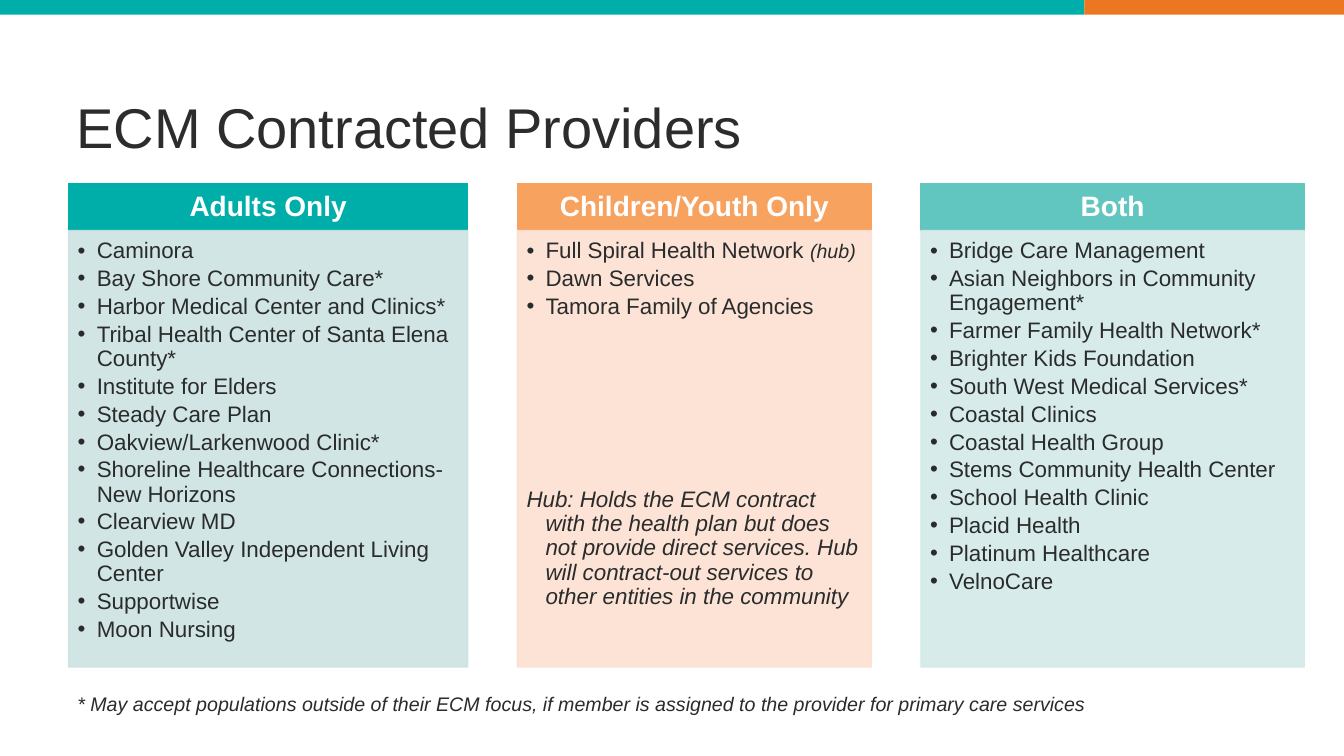
from lxml import etree
from pptx import Presentation
from pptx import util as u
from pptx.dml.color import RGBColor
from pptx.enum import shapes, text
from pptx.oxml import ns

# Content
TITLE = "ECM Contracted Providers"
FOOTNOTE = ("* May accept populations outside of their ECM focus, if member is "
            "assigned to the provider for primary care services")
HUB_TAG = "(hub)"
HUB_NOTE = ("Hub: Holds the ECM contract with the health plan but does not provide "
            "direct services. Hub will contract-out services to other entities in "
            "the community")
GROUPS = [
    dict(heading="Adults Only", width=10.06, dark="00AEA9", light="CCE3E2", note="",
         providers=["Caminora", "Bay Shore Community Care*",
                    "Harbor Medical Center and Clinics*",
                    "Tribal Health Center of Santa Elena County*",
                    "Institute for Elders", "Steady Care Plan",
                    "Oakview/Larkenwood Clinic*",
                    "Shoreline Healthcare Connections-New Horizons",
                    "Clearview MD", "Golden Valley Independent Living Center",
                    "Supportwise", "Moon Nursing"]),
    dict(heading="Children/Youth Only", width=8.92, dark="F8A260", light="FCE0D2",
         note=HUB_NOTE,
         providers=["Full Spiral Health Network " + HUB_TAG, "Dawn Services",
                    "Tamora Family of Agencies"]),
    dict(heading="Both", width=9.66, dark="62C6C0", light="D3EAE8", note="",
         providers=["Bridge Care Management",
                    "Asian Neighbors in Community Engagement*",
                    "Farmer Family Health Network*", "Brighter Kids Foundation",
                    "South West Medical Services*", "Coastal Clinics",
                    "Coastal Health Group", "Stems Community Health Center",
                    "School Health Clinic", "Placid Health",
                    "Platinum Healthcare", "VelnoCare"]),
]

# Layout in centimetres
SLIDE_W, SLIDE_H = 33.87, 19.05
BAND_SPLIT, BAND_H = 27.33, 0.37
LEFT, TOP, GAP = 1.73, 4.62, 1.25
HEADING_H, LIST_H = 1.19, 11.0
INDENT = 0.48
INK = "2A2C2C"


def color(target, hex_code, alpha=None):
    target.rgb = RGBColor.from_string(hex_code)
    if alpha:
        for srgb in target._xFill.iter(ns.qn("a:srgbClr")):
            etree.SubElement(srgb, ns.qn("a:alpha")).set("val", str(alpha * 1000))


def style(run, size, hex_code=INK, bold=False, italic=False):
    run.font.name = "Arial"
    run.font.size = u.Pt(size)
    run.font.bold, run.font.italic = bold, italic
    color(run.font.color, hex_code)


def set_insets(frame, left, top, right, bottom):
    frame.word_wrap = True
    frame.margin_left, frame.margin_top = u.Cm(left), u.Cm(top)
    frame.margin_right, frame.margin_bottom = u.Cm(right), u.Cm(bottom)


def add_block(slide, x, y, w, h, hex_code, alpha=None, outlined=True):
    block = slide.shapes.add_shape(shapes.MSO_SHAPE.RECTANGLE,
                                   u.Cm(x), u.Cm(y), u.Cm(w), u.Cm(h))
    block.shadow.inherit = False
    block.fill.solid()
    fills = [block.fill]
    if outlined:
        block.line.width = u.Pt(1)
        block.line.fill.solid()
        fills.append(block.line.fill)
    else:
        block.line.fill.background()
    for fill in fills:
        color(fill.fore_color, hex_code)
        if alpha:
            srgb = fill.fore_color._xFill if hasattr(fill.fore_color, "_xFill") else None
    if alpha:
        for srgb in block._element.spPr.iter(ns.qn("a:srgbClr")):
            etree.SubElement(srgb, ns.qn("a:alpha")).set("val", str(alpha * 1000))
    return block


def add_label(slide, x, y, w, h, words, size, hex_code=INK, italic=False):
    label = slide.shapes.add_textbox(u.Cm(x), u.Cm(y), u.Cm(w), u.Cm(h))
    label.text_frame.word_wrap = True
    label.text_frame.text = words
    style(label.text_frame.paragraphs[0].runs[0], size, hex_code, italic=italic)
    return label


def format_item(paragraph, bullet):
    paragraph.alignment = text.PP_ALIGN.LEFT
    paragraph.line_spacing = 0.9
    paragraph.space_after = u.Pt(2.6)
    props = paragraph._p.get_or_add_pPr()
    props.set("marL", str(u.Cm(INDENT)))
    props.set("indent", str(-u.Cm(INDENT)))
    if bullet:
        etree.SubElement(props, ns.qn("a:buFont")).set("typeface", "Arial")
        etree.SubElement(props, ns.qn("a:buChar")).set("char", "•")


def add_group(slide, x, group):
    # Heading bar
    heading = add_block(slide, x, TOP, group["width"], HEADING_H, group["dark"])
    frame = heading.text_frame
    set_insets(frame, 0.41, 0.23, 0.41, 0.23)
    frame.vertical_anchor = text.MSO_ANCHOR.MIDDLE
    frame.text = group["heading"]
    frame.paragraphs[0].alignment = text.PP_ALIGN.CENTER
    frame.paragraphs[0].line_spacing = 0.9
    style(frame.paragraphs[0].runs[0], 20, "FFFFFF", bold=True)

    # Provider list
    panel = add_block(slide, x, TOP + HEADING_H, group["width"], LIST_H,
                      group["light"], alpha=90)
    frame = panel.text_frame
    set_insets(frame, 0.23, 0.23, 0.3, 0.36)
    frame.vertical_anchor = text.MSO_ANCHOR.TOP
    for i, provider in enumerate(group["providers"]):
        item = frame.add_paragraph() if i else frame.paragraphs[0]
        item.text = provider.removesuffix(HUB_TAG)
        format_item(item, bullet=True)
        style(item.runs[0], 16)
        if provider.endswith(HUB_TAG):
            tag = item.add_run()
            tag.text = HUB_TAG
            style(tag, 14, italic=True)

    # Explanation under the list
    if group["note"]:
        note = frame.add_paragraph()
        note.text = group["note"]
        format_item(note, bullet=False)
        note.space_before = u.Pt(118)
        style(note.runs[0], 16, italic=True)


def main():
    deck = Presentation()
    deck.slide_width, deck.slide_height = u.Cm(SLIDE_W), u.Cm(SLIDE_H)
    slide = deck.slides.add_slide(deck.slide_layouts[6])

    # Top band
    add_block(slide, 0, 0, BAND_SPLIT, BAND_H, "00AEA9", outlined=False)
    add_block(slide, BAND_SPLIT, 0, SLIDE_W - BAND_SPLIT, BAND_H, "ED7623",
              outlined=False)

    # Title and footnote
    title = add_label(slide, 1.68, 1.35, 29.21, 3.68, TITLE, 40, "2C2C2C")
    title.text_frame.vertical_anchor = text.MSO_ANCHOR.MIDDLE
    add_label(slide, 1.7, 17.32, 29.18, 0.86, FOOTNOTE, 14, italic=True)

    # Provider columns
    x = LEFT
    for group in GROUPS:
        add_group(slide, x, group)
        x += group["width"] + GAP

    deck.save("out.pptx")


if __name__ == "__main__":
    main()
